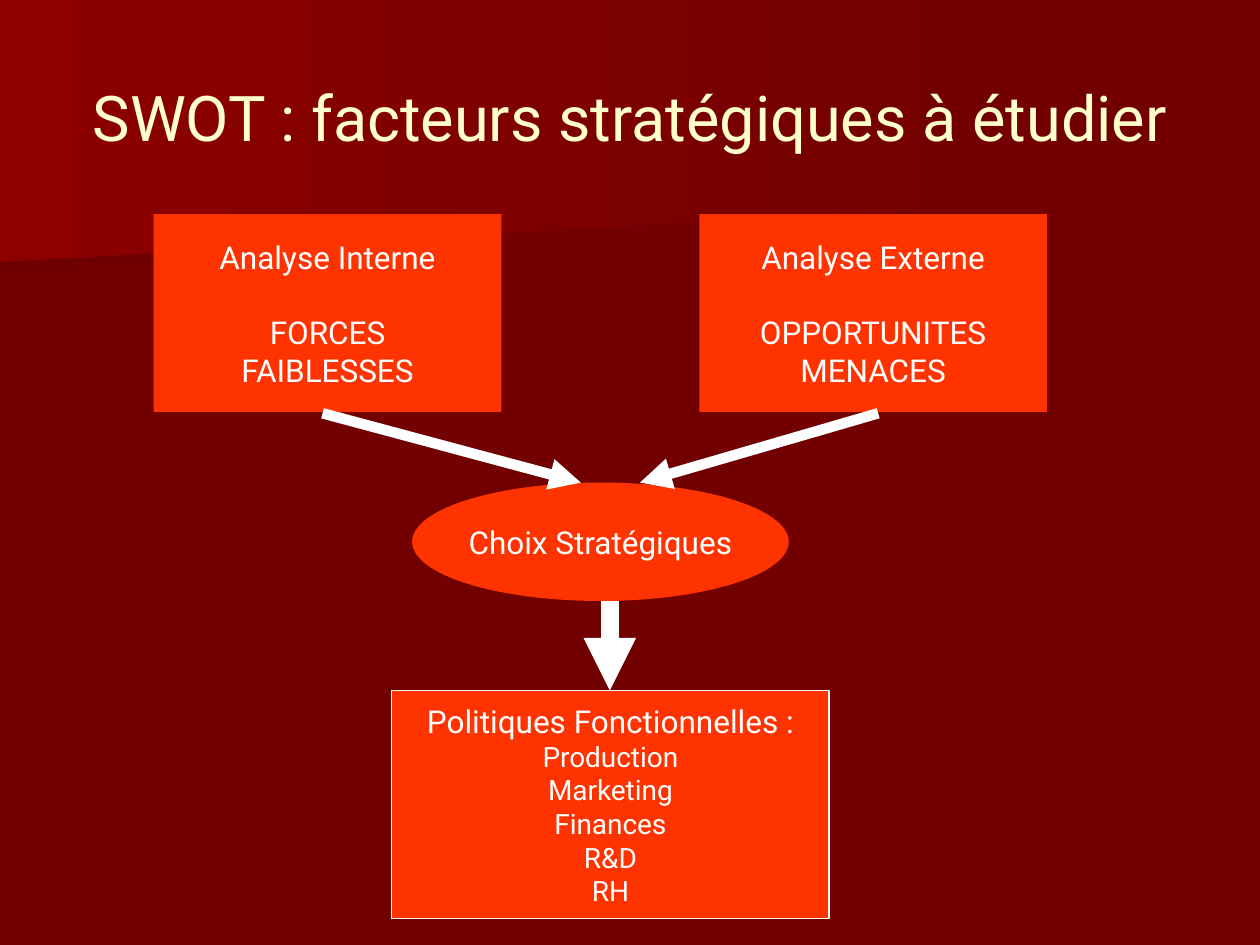
from dataclasses import dataclass

from lxml import etree
from pptx import Presentation
from pptx.dml.color import RGBColor
from pptx.enum import shapes, text
from pptx.oxml.ns import qn
from pptx.util import Inches, Pt


@dataclass(frozen=True)
class Theme:
    font: str = "Roboto"
    background: str = "720000"
    band_shade: str = "6F0000"
    band_light: str = "8C0000"
    box: str = "FF3300"
    white: str = "FFFFFF"
    title: str = "FFFFCC"
    title_size: float = 36
    heading_size: float = 18
    detail_size: float = 16
    paragraph_gap: float = 21.5


def rgb(value):
    return RGBColor.from_string(value)


def set_all(target, values):
    for name, value in values.items():
        setattr(target, name, value)


class SlideBuilder:
    def __init__(self, slide, theme):
        self.slide = slide
        self.theme = theme
        fill = slide.background.fill
        fill.solid()
        fill.fore_color.rgb = rgb(theme.background)

    def band(self, points, start_color):
        """Draw a background outline that fades into the slide colour."""
        first, *rest = [(Inches(x), Inches(y)) for x, y in points]
        builder = self.slide.shapes.build_freeform(*first)
        builder.add_line_segments(rest, close=True)
        band = builder.convert_to_shape()
        band.shadow.inherit = False
        band.line.fill.background()
        band.fill.gradient()
        band.fill.gradient_angle = 0
        colors = (start_color, self.theme.background)
        for stop, color in zip(band.fill.gradient_stops, colors):
            stop.color.rgb = rgb(color)

    def add_lines(self, frame, lines, color, wrap):
        """Fill a frame with centred (wording, size, space before) lines."""
        set_all(frame, {
            "word_wrap": wrap,
            "vertical_anchor": text.MSO_ANCHOR.MIDDLE,
            "auto_size": text.MSO_AUTO_SIZE.NONE,
        })
        for index, (wording, size, gap) in enumerate(lines):
            paragraph = frame.add_paragraph() if index else frame.paragraphs[0]
            set_all(paragraph, {
                "alignment": text.PP_ALIGN.CENTER,
                "space_before": Pt(gap),
            })
            run = paragraph.add_run()
            run.text = wording
            set_all(run.font, {"name": self.theme.font, "size": Pt(size)})
            run.font.color.rgb = rgb(color)

    def title(self, wording, area):
        title = self.slide.shapes.add_textbox(*map(Inches, area))
        lines = [(wording, self.theme.title_size, 0)]
        self.add_lines(title.text_frame, lines, self.theme.title, wrap=True)

    def box(self, kind, area, lines, outlined=False):
        box = self.slide.shapes.add_shape(kind, *map(Inches, area))
        box.shadow.inherit = False
        box.fill.solid()
        box.fill.fore_color.rgb = rgb(self.theme.box)
        if outlined:
            box.line.color.rgb = rgb(self.theme.white)
            box.line.width = Pt(0.75)
        else:
            box.line.fill.background()
        self.add_lines(box.text_frame, lines, self.theme.white, wrap=False)

    def arrow(self, start, end, width):
        arrow = self.slide.shapes.add_connector(
            shapes.MSO_CONNECTOR.STRAIGHT, *map(Inches, start + end))
        arrow.line.color.rgb = rgb(self.theme.white)
        arrow.line.width = Pt(width)
        properties = arrow.element.spPr
        outline = properties.find(qn("a:ln"))
        etree.SubElement(outline, qn("a:tailEnd"), type="triangle")
        etree.SubElement(properties, qn("a:effectLst"))


def main():
    deck = Presentation()
    set_all(deck, {"slide_width": Inches(10), "slide_height": Inches(7.5)})
    theme = Theme()
    page = SlideBuilder(deck.slides.add_slide(deck.slide_layouts[6]), theme)
    rectangle, ellipse = shapes.MSO_SHAPE.RECTANGLE, shapes.MSO_SHAPE.OVAL
    heading, detail = theme.heading_size, theme.detail_size

    page.band([(7.78, 1.53), (0, 2.17), (0, 1.01), (7.79, 1.01), (7.78, 1.28)],
              theme.band_shade)
    page.band([(7.92, 1.62), (0, 2.08), (0, 0), (7.92, 0)], theme.band_light)
    page.title("SWOT : facteurs stratégiques à étudier", (0.5, 0.3, 9, 1.25))

    analyses = [
        (1.22, "Analyse Interne", "FORCES", "FAIBLESSES"),
        (5.55, "Analyse Externe", "OPPORTUNITES", "MENACES"),
    ]
    for left, analysis, favourable, adverse in analyses:
        page.box(rectangle, (left, 1.7, 2.76, 1.57), [
            (analysis, heading, 0),
            (favourable, heading, theme.paragraph_gap),
            (adverse, heading, 0),
        ])

    page.box(ellipse, (3.27, 3.83, 2.99, 0.94),
             [("Choix Stratégiques", heading, 0)])

    functions = ["Production", "Marketing", "Finances", "R&D", "RH"]
    policies = [("Politiques Fonctionnelles :", heading, 0)]
    policies += [(function, detail, 0) for function in functions]
    page.box(rectangle, (3.11, 5.48, 3.47, 1.81), policies, outlined=True)

    page.arrow((2.56, 3.28), (4.61, 3.83), 6)
    page.arrow((6.97, 3.28), (5.08, 3.83), 6)
    page.arrow((4.84, 4.77), (4.84, 5.48), 10)
    deck.save("out.pptx")


if __name__ == "__main__":
    main()
